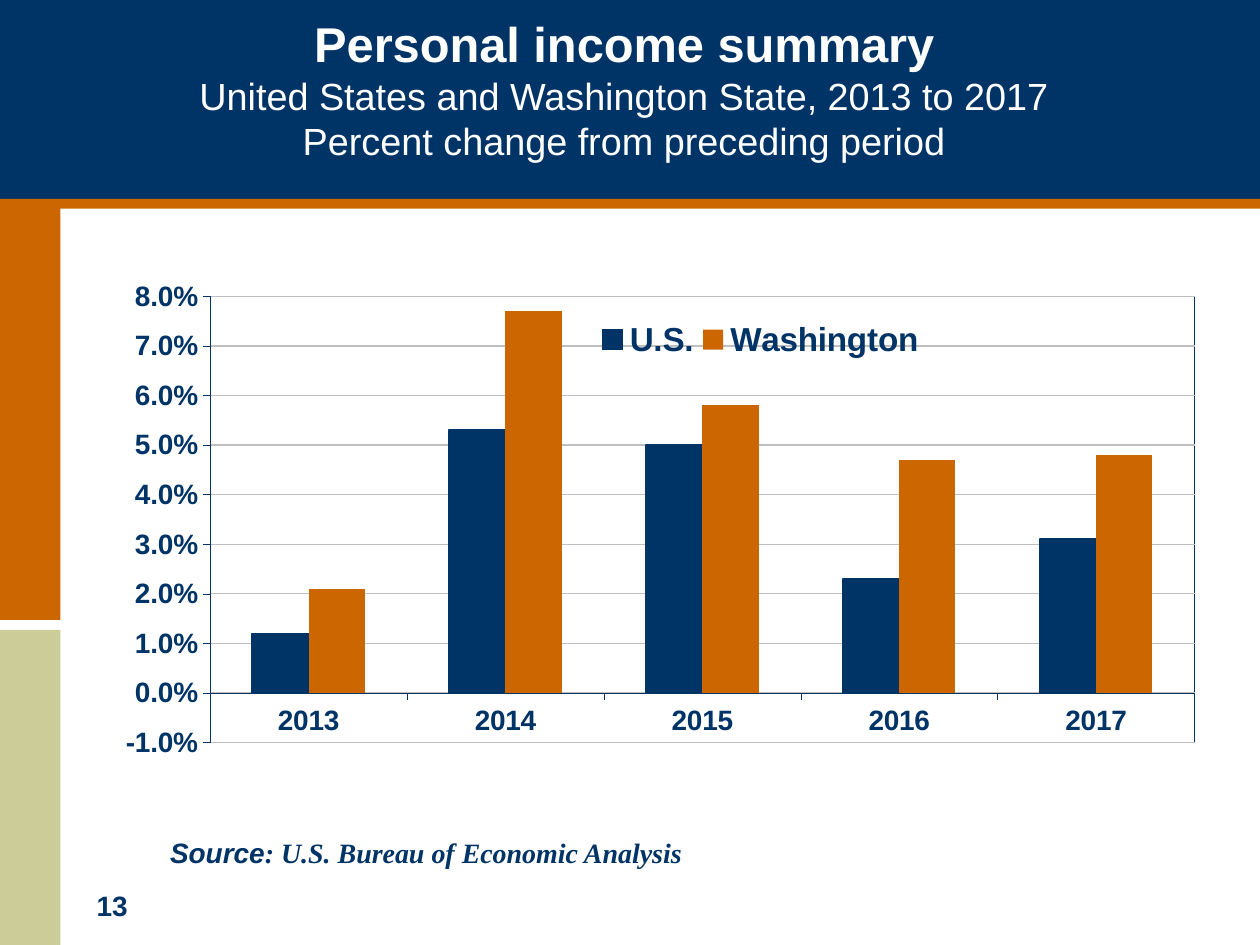
from lxml import etree
from pptx import Presentation
from pptx.chart.data import CategoryChartData
from pptx.dml.color import RGBColor
from pptx.enum.chart import XL_CHART_TYPE as ChartType, XL_LEGEND_POSITION as LegendPos
from pptx.enum.chart import XL_TICK_MARK as Tick
from pptx.enum.shapes import MSO_SHAPE as Shape
from pptx.enum.text import MSO_ANCHOR as Anchor, PP_ALIGN as Align
from pptx.oxml import parse_xml
from pptx.oxml.ns import nsdecls, qn
from pptx.util import Cm, Pt

NAVY = RGBColor(0x00, 0x33, 0x66)
ORANGE = RGBColor(0xCC, 0x66, 0x00)
OLIVE = RGBColor(0xCC, 0xCC, 0x99)
WHITE = RGBColor(0xFF, 0xFF, 0xFF)
GREY = RGBColor(0xBF, 0xBF, 0xBF)

WIDTH, HEIGHT = 25.4, 19.05
BAND, STRIPE, SIDE = 4.01, 0.2, 1.22
YEARS = ["2013", "2014", "2015", "2016", "2017"]
SERIES = [
    ("U.S.", NAVY, (0.012, 0.053, 0.05, 0.023, 0.031)),
    ("Washington", ORANGE, (0.021, 0.077, 0.058, 0.047, 0.048)),
]


def set_font(font, size, color=NAVY, **extra):
    """Apply size, colour and any other font values."""
    font.color.rgb = color
    values = {"name": "Arial", "size": Pt(size), "bold": True, **extra}
    for key, value in values.items():
        setattr(font, key, value)


def add_block(s, left, top, width, height, color):
    """Add a plain filled rectangle."""
    sp = s.shapes.add_shape(Shape.RECTANGLE, Cm(left), Cm(top), Cm(width), Cm(height))
    sp.shadow.inherit = False
    sp.fill.solid()
    sp.fill.fore_color.rgb = color
    sp.line.fill.background()


def add_text(s, left, top, width, height, runs, align=Align.LEFT, anchor=Anchor.TOP):
    """Add a one-paragraph text box from (text, font values) runs."""
    tf = s.shapes.add_textbox(Cm(left), Cm(top), Cm(width), Cm(height)).text_frame
    tf.word_wrap = True
    tf.vertical_anchor = anchor
    p = tf.paragraphs[0]
    p.alignment = align
    for text, values in runs:
        for i, line in enumerate(text.split("\n")):
            if i:
                p.add_line_break()
            r = p.add_run()
            r.text = line
            set_font(r.font, **values)
    return p


def add_sidebar(s, left, top, width, height):
    """Add the two-colour strip with a gap between its parts."""
    upper, lower = 8.49, 6.35
    add_block(s, left, top, width, upper, ORANGE)
    add_block(s, left, top + height - lower, width, lower, OLIVE)


def add_header(s, left, top, width, height):
    """Add the title band, its stripe and the heading."""
    add_block(s, left, top, width, height, NAVY)
    add_block(s, left, top + height, width, STRIPE, ORANGE)
    p = add_text(s, left + 0.2, top + 0.2, width - 0.63, 3.18,
                 [("Personal income summary", {"size": 27.9, "color": WHITE})],
                 Align.CENTER, Anchor.MIDDLE)
    for line in ("United States and Washington State, 2013 to 2017",
                 "Percent change from preceding period"):
        p.add_line_break()
        r = p.add_run()
        r.text = line
        set_font(r.font, 21.6, WHITE, bold=False)


def manual_layout(x, y, w, h, inner=False):
    """Return a chart layout element in fractions of the chart."""
    target = '<c:layoutTarget val="inner"/>' if inner else ""
    places = "".join(f'<c:{k} val="{v}"/>' for k, v in zip("xywh", (x, y, w, h)))
    return parse_xml(
        f'<c:layout {nsdecls("c")}><c:manualLayout>{target}<c:xMode val="edge"/>'
        f'<c:yMode val="edge"/>{places}</c:manualLayout></c:layout>')


def style_axis(axis):
    """Set the line, ticks and labels shared by both axes."""
    axis.major_tick_mark = Tick.OUTSIDE
    axis.minor_tick_mark = Tick.NONE
    axis.format.line.color.rgb = NAVY
    axis.format.line.width = Pt(0.25)
    set_font(axis.tick_labels.font, 16)


def add_income_chart(s, left, top, width, height):
    """Add the clustered columns of income growth."""
    data = CategoryChartData(number_format="0.0%")
    data.categories = YEARS
    for name, _, values in SERIES:
        data.add_series(name, values)
    chart = s.shapes.add_chart(ChartType.COLUMN_CLUSTERED, Cm(left), Cm(top),
                               Cm(width), Cm(height), data).chart
    chart.has_title = False
    set_font(chart.font, 19)

    plot = chart.plots[0]
    plot.gap_width, plot.overlap, plot.vary_by_categories = 150, 0, False
    for series, (_, color, _) in zip(plot.series, SERIES):
        series.invert_if_negative = False
        series.format.fill.solid()
        series.format.fill.fore_color.rgb = color
    line = plot.series[0].format.line
    line.color.rgb = NAVY
    line.width = Pt(1.06)

    axis = chart.value_axis
    for each in (chart.category_axis, axis):
        style_axis(each)
    for key, value in {"minimum_scale": -0.01, "maximum_scale": 0.08,
                       "major_unit": 0.01, "has_major_gridlines": True}.items():
        setattr(axis, key, value)
    axis.tick_labels.number_format = "0.0%"
    axis.tick_labels.number_format_is_linked = False
    axis.major_gridlines.format.line.color.rgb = GREY
    axis.major_gridlines.format.line.width = Pt(0.75)

    chart.has_legend = True
    legend = chart.legend
    legend.position = LegendPos.RIGHT
    legend.include_in_layout = False
    set_font(legend.font, 19)
    area = chart._chartSpace.find(".//" + qn("c:plotArea"))
    for parent, index, box, inner in (
            (area, 0, (0.107, 0.076, 0.882, 0.763), True),
            (legend._element, 1, (0.45, 0.11, 0.3, 0.08), False)):
        for old in parent.findall(qn("c:layout")):
            parent.remove(old)
        parent.insert(index, manual_layout(*box, inner))
    border = etree.SubElement(area, qn("c:spPr"))
    etree.SubElement(border, qn("a:noFill"))
    ln = etree.SubElement(border, qn("a:ln"), w=str(Pt(0.25)))
    fill = etree.SubElement(ln, qn("a:solidFill"))
    etree.SubElement(fill, qn("a:srgbClr"), val=str(NAVY))


def add_footer(s, left, top, width, height):
    """Add the source line and the slide number."""
    add_text(s, left + 1.48, top, width, 0.94, [
        ("Source", {"size": 16, "italic": True}),
        (": U.S. Bureau of Economic Analysis",
         {"size": 16, "italic": True, "name": "Times New Roman"})])
    add_text(s, left, top + height - 1.27, 1.7, 0.94, [("13", {"size": 16})])


def main():
    """Build and save the slide."""
    prs = Presentation()
    prs.slide_width, prs.slide_height = Cm(WIDTH), Cm(HEIGHT)
    s = prs.slides.add_slide(prs.slide_layouts[6])
    add_sidebar(s, 0, BAND, SIDE, HEIGHT - BAND)
    add_header(s, 0, 0, WIDTH, BAND)
    add_income_chart(s, 1.83, 5.08, 22.5, 11.79)
    add_footer(s, 1.7, 16.71, 15.04, 2.34)
    prs.save("out.pptx")


if __name__ == "__main__":
    main()
